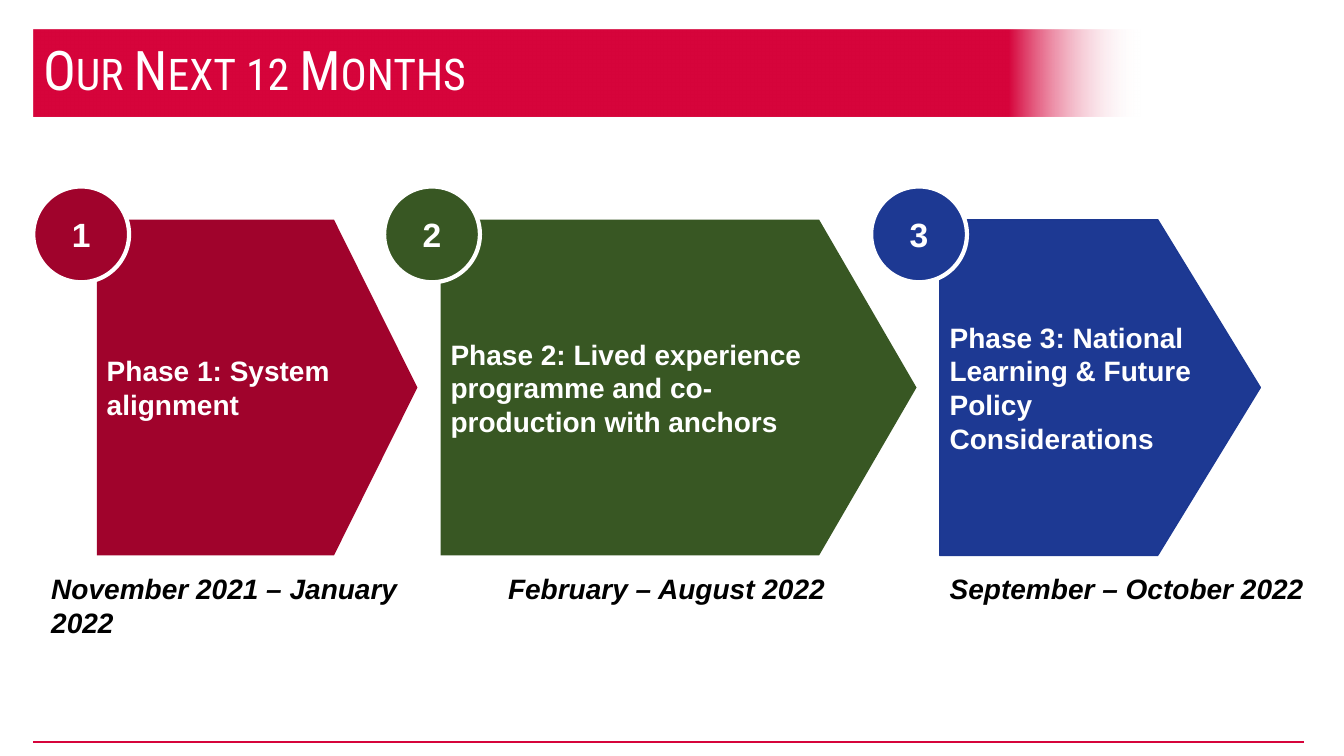
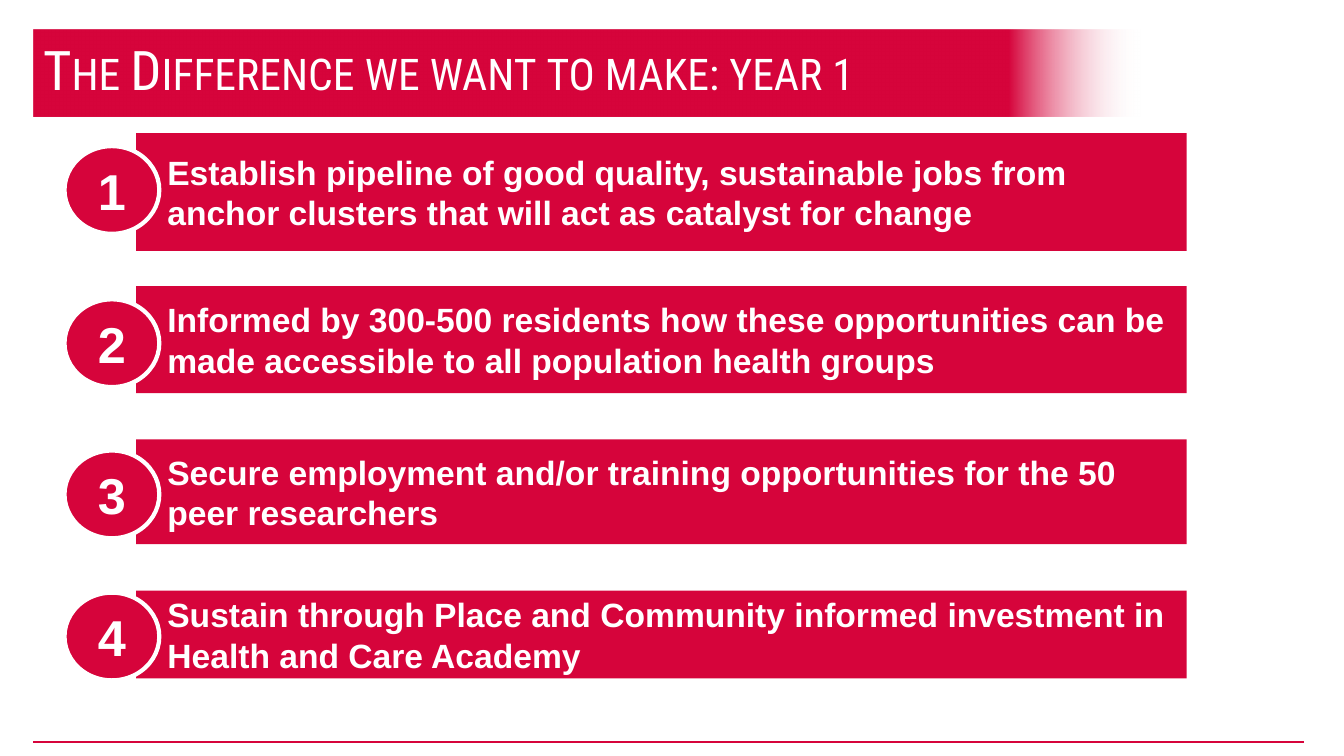
import pptx
import pptx.dml.color
import pptx.enum.shapes
import pptx.enum.text
import pptx.oxml.ns
import pptx.util
from lxml import etree

EMU_PER_PX = 9144  # 100 px to the inch
SHAPES = pptx.enum.shapes.MSO_SHAPE
ALIGN = pptx.enum.text.PP_ALIGN
ANCHOR = pptx.enum.text.MSO_ANCHOR
AUTO_SIZE = pptx.enum.text.MSO_AUTO_SIZE
qn = pptx.oxml.ns.qn


def px(length):
    return pptx.util.Emu(length * EMU_PER_PX)


def colour(value):
    return pptx.dml.color.RGBColor.from_string(value)


class Deck:
    """Holds the shared style and the page being drawn."""

    RED, WHITE, BLACK = "D6043B", "FFFFFF", "000000"
    TITLE_FONT, BODY_FONT = "Roboto Condensed", "Arial"

    def __init__(self):
        self.deck = pptx.Presentation()
        self.deck.slide_width, self.deck.slide_height = px(1333), px(750)
        self.page = None

    def new_page(self, title):
        self.page = self.deck.slides.add_slide(self.deck.slide_layouts[6])
        self.footer_line()
        self.title_band(title)

    def footer_line(self):
        line = self.page.shapes.add_connector(
            pptx.enum.shapes.MSO_CONNECTOR.STRAIGHT,
            px(33), px(736), px(1293), px(736))
        line.line.color.rgb = colour(self.RED)
        line.line.width = pptx.util.Pt(1)
        etree.SubElement(line.element.spPr, qn("a:effectLst"))

    def title_band(self, title):
        band = self.shape(SHAPES.RECTANGLE, (33, 29, 1098, 87), self.RED)
        self.fade(band)
        paragraph = self.put_text(band, title, 39, name=self.TITLE_FONT, bold=False)
        paragraph.line_spacing = 0.9
        band.element.find(".//" + qn("a:rPr")).set("cap", "small")

    def fade(self, band):
        # Red running out to transparent white at the right end
        band.fill.gradient()
        band.fill.gradient_angle = 180
        stops = band.element.spPr.find(".//" + qn("a:gsLst"))
        for stop in list(stops):
            stops.remove(stop)
        for percent, value in ((0, self.WHITE), (12, self.RED), (100, self.RED)):
            stop = etree.SubElement(stops, qn("a:gs"), pos=str(percent * 1000))
            tone = etree.SubElement(stop, qn("a:srgbClr"), val=value)
            if percent == 0:
                etree.SubElement(tone, qn("a:alpha"), val="0")

    def shape(self, kind, place, fill, outline=None, width=1):
        shape = self.page.shapes.add_shape(kind, *map(px, place))
        shape.shadow.inherit = False
        shape.fill.solid()
        shape.fill.fore_color.rgb = colour(fill)
        if outline:
            shape.line.color.rgb = colour(outline)
            shape.line.width = pptx.util.Pt(width)
        else:
            shape.line.fill.background()
        return shape

    def put_text(self, box, text, size, value=WHITE, align=ALIGN.LEFT,
                 anchor=ANCHOR.MIDDLE, **formats):
        frame = box.text_frame
        frame.word_wrap = True
        frame.vertical_anchor = anchor
        paragraph = frame.paragraphs[0]
        paragraph.alignment = align
        span = paragraph.add_run()
        span.text = text
        span.font.color.rgb = colour(value)
        defaults = {"name": self.BODY_FONT, "size": pptx.util.Pt(size), "bold": True}
        for key, setting in {**defaults, **formats}.items():
            setattr(span.font, key, setting)
        return paragraph

    def badge(self, number, place, fill, size):
        badge = self.shape(SHAPES.OVAL, place, fill, self.WHITE, 3)
        self.put_text(badge, str(number), size, align=ALIGN.CENTER)

    def phase_arrow(self, text, left, width, point, fill, outline):
        arrow = self.shape(SHAPES.PENTAGON, (left, 218, width, 333), fill, outline)
        arrow.adjustments[0] = point
        self.put_text(arrow, text, 20)

    def date_label(self, text, left, width, height):
        label = self.page.shapes.add_textbox(*map(px, (left, 562, width, height)))
        self.put_text(label, text, 20, self.BLACK, anchor=ANCHOR.TOP, italic=True)
        label.text_frame.auto_size = AUTO_SIZE.SHAPE_TO_FIT_TEXT

    def goal_bar(self, text, top, height):
        bar = self.shape(SHAPES.RECTANGLE, (135, top, 1042, height), self.RED)
        bar.text_frame.margin_left = px(31)
        self.put_text(bar, text, 24)


# Phase: text, left, width, point, fill, outline; badge left; date, left, width, height
PHASES = [
    (("Phase 1: System alignment", 96, 318, 0.26, "A0032C", None), 33,
     ("November 2021 – January 2022", 41, 385, 77)),
    (("Phase 2: Lived experience programme and co-production with anchors",
      437, 472, 0.29, "385723", None), 381,
     ("February – August 2022", 494, 358, 44)),
    (("Phase 3: National Learning & Future Policy Considerations",
      932, 318, 0.32, "1D3993", "1C3891"), 864,
     ("September – October 2022", 932, 385, 44)),
]

# Goal: text, bar top, bar height, badge top
GOALS = [
    ("Establish pipeline of good quality, sustainable jobs from anchor clusters "
     "that will act as catalyst for change", 132, 117, 145),
    ("Informed by 300-500 residents how these opportunities can be made "
     "accessible to all population health groups", 284, 106, 297),
    ("Secure employment and/or training opportunities for the 50 peer "
     "researchers", 436, 104, 447),
    ("Sustain through Place and Community informed investment in Health and "
     "Care Academy", 586, 87, 588),
]


def main():
    deck = Deck()

    # Timeline of phases
    deck.new_page("Our Next 12 Months")
    for number, (arrow, badge_left, date) in enumerate(PHASES, 1):
        deck.phase_arrow(*arrow)
        deck.badge(number, (badge_left, 185, 95, 95), arrow[4], 24)
        deck.date_label(*date)

    # Goals for the first year
    deck.new_page("The Difference we want to make: year 1")
    for number, (text, top, height, badge_top) in enumerate(GOALS, 1):
        deck.goal_bar(text, top, height)
        deck.badge(number, (64, badge_top, 94, 87), deck.RED, 36)

    deck.deck.save("out.pptx")


if __name__ == "__main__":
    main()
